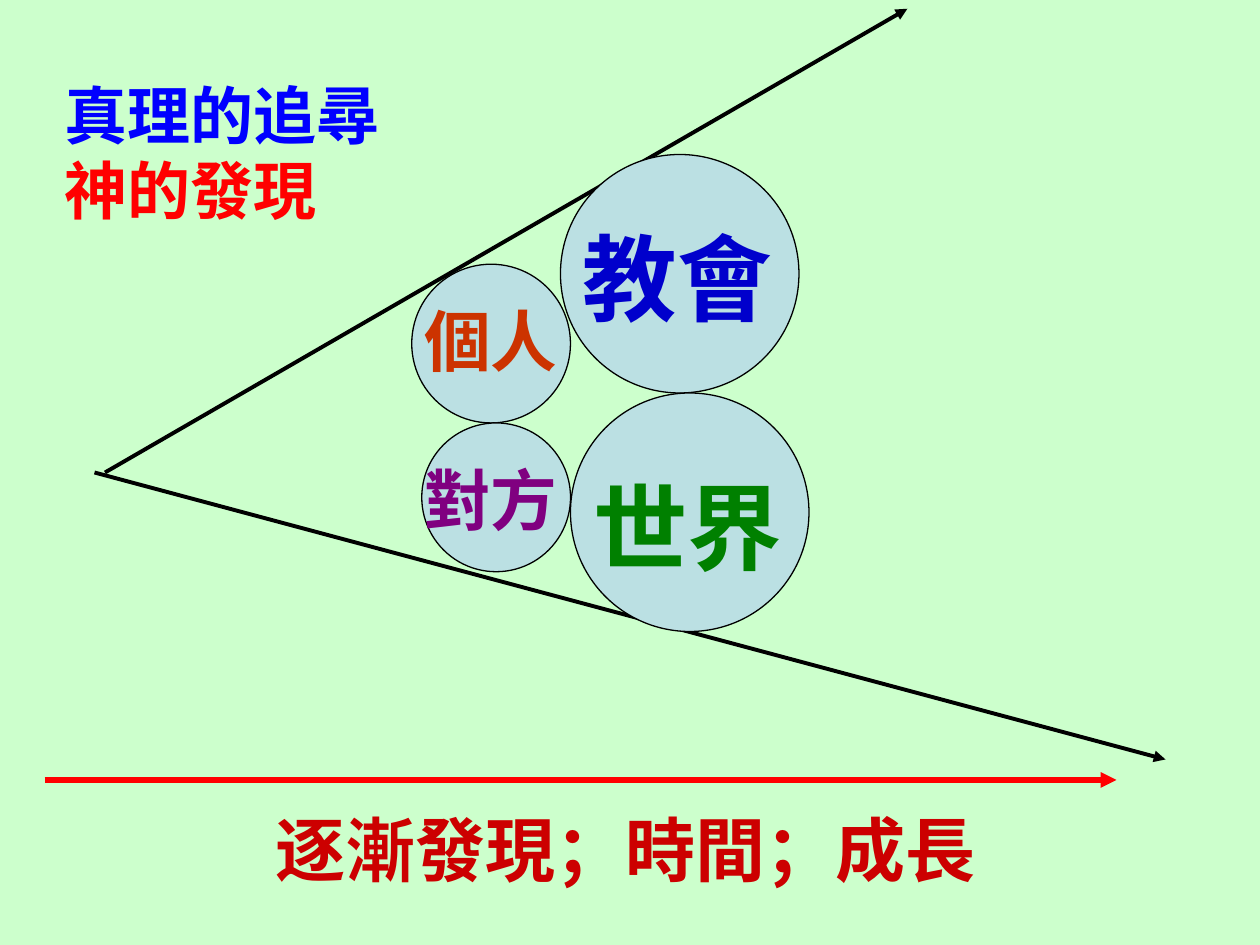
import pptx
import pptx.util
import pptx.dml.color
import pptx.enum.shapes
import pptx.enum.text
from lxml import etree

Pt = pptx.util.Pt
RGBColor = pptx.dml.color.RGBColor

BACKGROUND = RGBColor(0xCC, 0xFF, 0xCC)
CIRCLE = RGBColor(0xBB, 0xE0, 0xE3)
BLACK = RGBColor(0x00, 0x00, 0x00)
BLUE = RGBColor(0x00, 0x00, 0xFF)
RED = RGBColor(0xFF, 0x00, 0x00)
ORANGE = RGBColor(0xCC, 0x33, 0x00)
PURPLE = RGBColor(0x80, 0x00, 0x80)
NAVY = RGBColor(0x00, 0x00, 0xCC)
GREEN = RGBColor(0x00, 0x80, 0x00)
DARK_RED = RGBColor(0xCC, 0x00, 0x00)

CJK_FONT = "Noto Sans CJK SC"
A = "{http://schemas.openxmlformats.org/drawingml/2006/main}"


def write(p, text, size, color, font=CJK_FONT, bold=True):
    """Add one formatted run to a left-aligned paragraph."""
    p.alignment = pptx.enum.text.PP_ALIGN.LEFT
    r = p.add_run()
    r.text = text
    r.font.size = Pt(size)
    r.font.bold = bold
    r.font.name = font
    r.font.color.rgb = color
    etree.SubElement(r.font._element, A + "ea", typeface=CJK_FONT)


class Deck:
    def __init__(self, width, height):
        self.prs = pptx.Presentation()
        self.prs.slide_width, self.prs.slide_height = Pt(width), Pt(height)
        self.s = self.prs.slides.add_slide(self.prs.slide_layouts[5])
        fill = self.s.background.fill
        fill.solid()
        fill.fore_color.rgb = BACKGROUND

    def frame(self, sp):
        tf = sp.text_frame
        tf.word_wrap = True
        tf.auto_size = pptx.enum.text.MSO_AUTO_SIZE.NONE
        tf.vertical_anchor = pptx.enum.text.MSO_ANCHOR.MIDDLE
        return tf

    def title(self, lines, x, y, w, h, size, pitch):
        sp = self.s.shapes.title
        sp.left, sp.top, sp.width, sp.height = Pt(x), Pt(y), Pt(w), Pt(h)
        tf = self.frame(sp)
        for i, (text, color) in enumerate(lines):
            p = tf.add_paragraph() if i else tf.paragraphs[0]
            p.line_spacing = Pt(pitch)
            p.space_before = Pt(0)
            write(p, text, size, color)

    def label(self, text, x, y, w, h, **style):
        sp = self.s.shapes.add_textbox(Pt(x), Pt(y), Pt(w), Pt(h))
        write(self.frame(sp).paragraphs[0], text, **style)

    def circle(self, x, y, d):
        sp = self.s.shapes.add_shape(
            pptx.enum.shapes.MSO_SHAPE.OVAL, Pt(x), Pt(y), Pt(d), Pt(d))
        sp.shadow.inherit = False
        sp.fill.solid()
        sp.fill.fore_color.rgb = CIRCLE
        sp.line.color.rgb = BLACK
        sp.line.width = Pt(0.75)

    def arrow(self, x1, y1, x2, y2, color=BLACK, width=2.25):
        c = self.s.shapes.add_connector(
            pptx.enum.shapes.MSO_CONNECTOR.STRAIGHT,
            Pt(x1), Pt(y1), Pt(x2), Pt(y2))
        c.line.color.rgb = color
        c.line.width = Pt(width)
        etree.SubElement(c.line._get_or_add_ln(), A + "tailEnd", type="triangle")
        etree.SubElement(c._element.spPr, A + "effectLst")


def main():
    deck = Deck(720, 540)

    # Heading
    deck.title([("真理的追尋", BLUE), ("神的發現", RED)],
               x=29.5, y=40, w=240, h=94, size=36, pitch=43)

    # Widening field of view
    deck.arrow(60, 270, 518.5, 5)
    deck.arrow(54, 270, 666, 434)

    # Circles: left, top, diameter
    for x, y, d in [(235.3, 151, 90.7), (241, 241.7, 85),
                    (320.3, 88.3, 136.3), (326, 224.6, 136.3)]:
        deck.circle(x, y, d)

    # Circle labels
    small, large = (96.5, 52.5), (136, 72)
    deck.label("個人", 235.3, 168, *small, size=38, color=ORANGE)
    deck.label("對方", 235.3, 258.7, *small, size=38, color=PURPLE)
    deck.label("教會", 326, 122.4, *large, size=54, color=NAVY)
    deck.label("世界", 332, 264.2, *large, size=54, color=GREEN, font="Arial")

    # Time line
    deck.arrow(25.5, 445.7, 638, 445.7, color=RED, width=3)
    deck.label("逐漸發現；時間；成長", 150.5, 457.2, 430.5, 55.5,
               size=40, color=DARK_RED)

    deck.prs.save("out.pptx")


if __name__ == "__main__":
    main()
